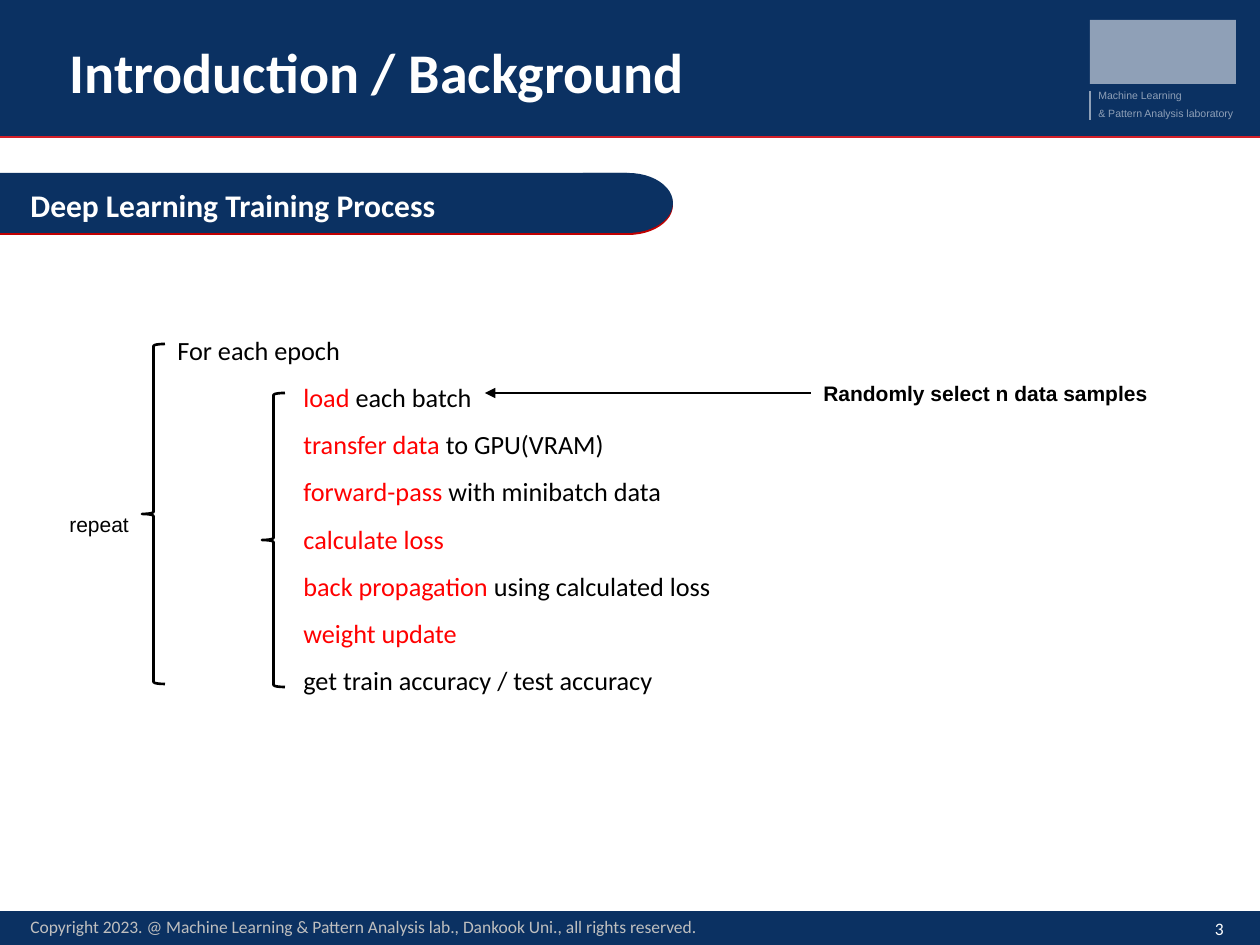
"""Build the training process slide."""
from dataclasses import dataclass

from lxml import etree
from pptx import Presentation
from pptx import util as u
from pptx.dml.color import RGBColor
from pptx.enum import shapes, text
from pptx.oxml.ns import qn


@dataclass(frozen=True)
class Theme:
    navy: str = "0B3162"
    red: str = "D41F28"
    dark_red: str = "C00000"
    key: str = "FF0000"
    ink: str = "000000"
    white: str = "FFFFFF"
    grey: str = "BFBFBF"
    mist: str = "8FA0B7"
    head: str = "Calibri"
    body: str = "Arial"
    title: int = 32
    section: int = 18
    step: int = 15
    label: int = 12
    small: int = 10
    tiny: int = 6
    line: float = 1.5


def px(n):
    return u.Inches(n / 126)


def rgb(value):
    return RGBColor.from_string(value)


class Deck:
    def __init__(self, theme):
        self.t = theme
        self.prs = Presentation()
        self.prs.slide_width, self.prs.slide_height = px(1260), px(945)
        self.s = self.prs.slides.add_slide(self.prs.slide_layouts[5])

    def shape(self, kind, box, fill=None, line=None):
        sp = self.s.shapes.add_shape(kind, *map(px, box))
        sp.shadow.inherit = False
        if fill:
            sp.fill.solid()
            sp.fill.fore_color.rgb = rgb(fill)
        else:
            sp.fill.background()
        if line:
            sp.line.color.rgb = rgb(line)
            sp.line.width = u.Pt(self.t.line)
        else:
            sp.line.fill.background()
        return sp

    def line(self, x1, y1, x2, y2, color, arrow=False):
        c = self.s.shapes.add_connector(shapes.MSO_CONNECTOR.STRAIGHT, *map(px, (x1, y1, x2, y2)))
        c.line.color.rgb = rgb(color)
        c.line.width = u.Pt(self.t.line)
        if arrow:
            etree.SubElement(c.line._get_or_add_ln(), qn("a:tailEnd"), type="triangle")
        etree.SubElement(c._element.spPr, qn("a:effectLst"))
        return c

    def font(self, p, size, color, face, bold=False):
        p.font.size, p.font.name, p.font.bold = u.Pt(size), face, bold
        p.font.color.rgb = rgb(color)

    def title(self, words, box):
        sp = self.s.shapes.title
        self.s.shapes._spTree.append(sp._element)
        sp.left, sp.top, sp.width, sp.height = map(px, box)
        tf = sp.text_frame
        tf.text = words
        tf.auto_size = text.MSO_AUTO_SIZE.NONE
        tf.vertical_anchor = text.MSO_ANCHOR.BOTTOM
        p = tf.paragraphs[0]
        p.alignment, p.line_spacing = text.PP_ALIGN.LEFT, 0.9
        self.font(p, self.t.title, self.t.white, self.t.head, True)

    def text(self, words, box, size, color, face, bold=False, wrap=True,
             anchor=text.MSO_ANCHOR.MIDDLE, align=text.PP_ALIGN.LEFT):
        sp = self.s.shapes.add_textbox(*map(px, box))
        tf = sp.text_frame
        tf.word_wrap, tf.vertical_anchor = wrap, anchor
        p = tf.paragraphs[0]
        p.text, p.alignment = words, align
        self.font(p, size, color, face, bold)
        return sp

    def steps(self, rows, box, indent):
        tf = self.s.shapes.add_textbox(*map(px, box)).text_frame
        tf.word_wrap = True
        for i, (key, rest) in enumerate(rows):
            p = tf.add_paragraph() if i else tf.paragraphs[0]
            p.line_spacing = 1.5
            if i:
                p._p.get_or_add_pPr().set("marL", str(px(indent)))
            self.font(p, self.t.step, self.t.ink, self.t.head)
            for words, color in ((key, self.t.key), (rest, self.t.ink)):
                if words:
                    r = p.add_run()
                    r.text = words
                    r.font.color.rgb = rgb(color)


def main():
    t = Theme()
    d = Deck(t)
    kind = shapes.MSO_SHAPE
    top = text.MSO_ANCHOR.TOP

    d.shape(kind.RECTANGLE, (0, 911, 1260, 34), t.navy)
    d.shape(kind.RECTANGLE, (0, 0, 1260, 138), t.navy)
    d.line(0, 137, 1260, 137, t.red)
    d.shape(kind.RECTANGLE, (1090, 20, 146, 64), t.mist)
    for words, y, w in (("Machine Learning", 83, 111),
                        ("& Pattern Analysis laboratory", 101, 163)):
        d.text(words, (1086, y, w, 25), t.tiny, t.mist, t.body, wrap=False, anchor=top)
    d.line(1090, 91, 1090, 120, t.mist)
    d.title("Introduction / Background", (57, 19, 1023, 93))

    d.text("Copyright 2023. @ Machine Learning & Pattern Analysis lab., "
           "Dankook Uni., all rights reserved.",
           (18, 902, 696, 50), t.small, t.grey, t.head)
    d.text("3", (1149, 911, 87, 34), t.small, t.white, t.head, align=text.PP_ALIGN.RIGHT)

    for y, color in ((175, t.dark_red), (173, t.navy)):
        d.shape(kind.FLOWCHART_DELAY, (583, y, 90, 60), color)
        d.shape(kind.RECTANGLE, (0, y, 627, 60), color)
    d.text("Deep Learning Training Process", (18, 180, 610, 50),
           t.section, t.white, t.head, bold=True, anchor=top)

    d.steps([
        ("", "For each epoch"),
        ("load", " each batch"),
        ("transfer data", " to GPU(VRAM)"),
        ("forward-pass", " with minibatch data"),
        ("calculate loss", ""),
        ("back propagation ", "using calculated loss"),
        ("weight update", ""),
        ("", "get train accuracy / test accuracy"),
    ], (165, 312, 610, 388), 126)
    for box in ((142, 344, 23, 340), (262, 393, 23, 294)):
        d.shape(kind.LEFT_BRACE, box, line=t.ink)
    d.text("repeat", (57, 505, 87, 38), t.label, t.ink, t.body, wrap=False)

    note = d.text("Randomly select n data samples", (811, 374, 353, 38),
                  t.label, t.ink, t.body, bold=True, wrap=False)
    d.line(811, 393, 485, 393, t.ink, arrow=True).begin_connect(note, 1)
    d.prs.save("out.pptx")


if __name__ == "__main__":
    main()
